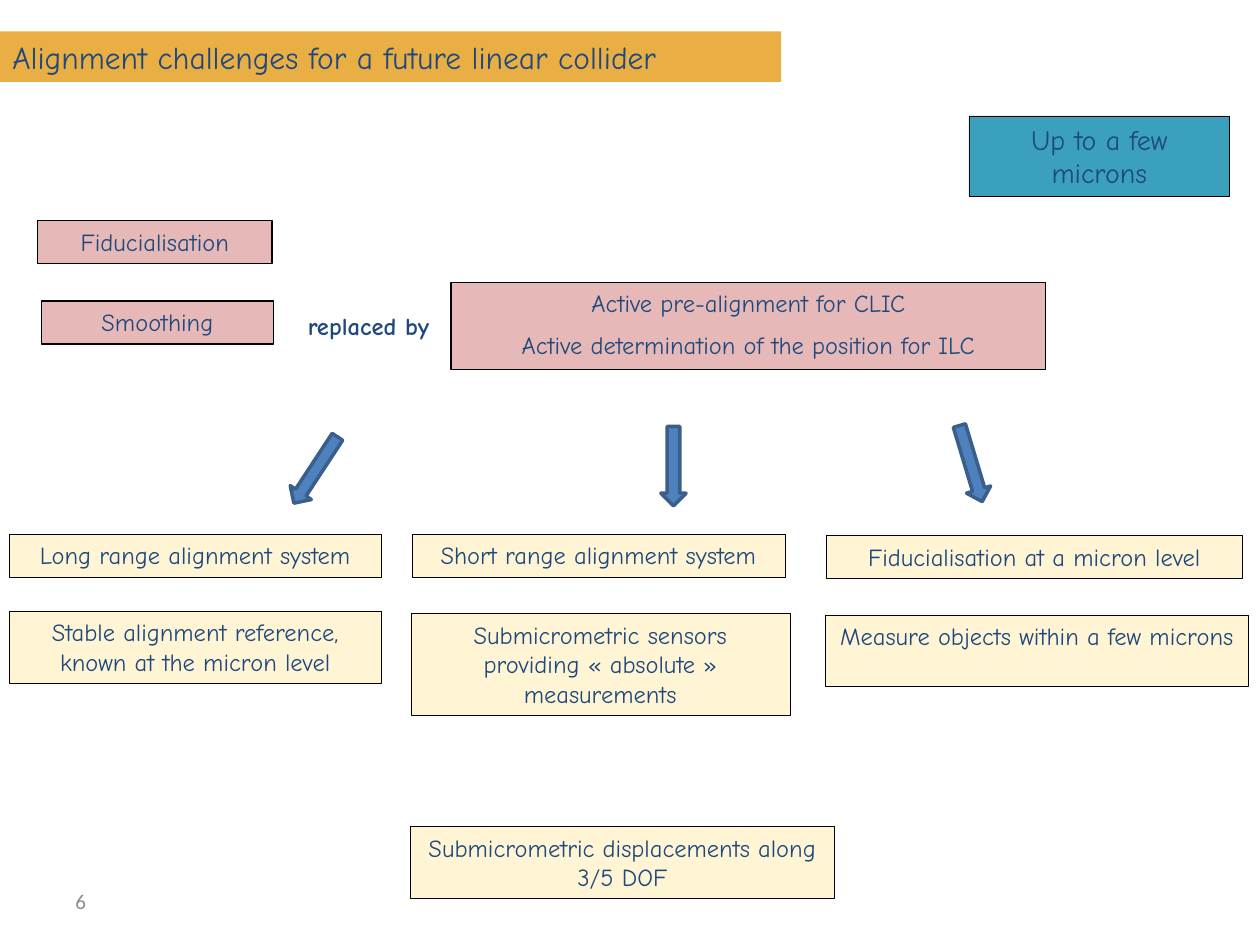
from pptx import Presentation
from pptx.dml.color import RGBColor
from pptx.enum.shapes import MSO_SHAPE
from pptx.enum.text import MSO_ANCHOR, PP_ALIGN
from pptx.util import Inches, Pt

RECT, ARROW = MSO_SHAPE.RECTANGLE, MSO_SHAPE.RIGHT_ARROW
LEFT, CENTER = PP_ALIGN.LEFT, PP_ALIGN.CENTER
TOP, MIDDLE = MSO_ANCHOR.TOP, MSO_ANCHOR.MIDDLE


class Theme:
    font, plain = "Comic Neue", "Calibri"
    navy, gray, black = "1F497D", "8C8C8C", "000000"
    gold, pink, cream, teal = "EAAF44", "E6B9B8", "FFF5D5", "3BA0BB"
    blue, edge = "4F81BD", "3A5F8C"
    title, lead, body, small = 18, 16, 14, 12
    thin, mid, thick = 0.25, 0.75, 2


deck = Presentation()
deck.slide_width, deck.slide_height = Inches(10), Inches(7.5)
slide = deck.slides.add_slide(deck.slide_layouts[6])


def add_form(kind, area, fill, line=None, width=Theme.thin):
    form = slide.shapes.add_shape(kind, *map(Inches, area))
    form.shadow.inherit = False
    form.fill.solid()
    form.fill.fore_color.rgb = RGBColor.from_string(fill)
    if line:
        form.line.color.rgb = RGBColor.from_string(line)
        form.line.width = Pt(width)
    else:
        form.line.fill.background()
    return form


def add_text(text, area, form=None, size=Theme.body, color=Theme.navy,
             font=Theme.font, bold=False, align=CENTER, anchor=TOP):
    """Write text into form, or into a new text box; each line is a paragraph."""
    form = form or slide.shapes.add_textbox(*map(Inches, area))
    frame = form.text_frame
    frame.word_wrap = True
    frame.vertical_anchor = anchor
    frame.text = text
    for index, para in enumerate(frame.paragraphs):
        para.alignment = align
        para.space_before = Pt(size / 2 if index else 0)
        para.font.name, para.font.size, para.font.bold = font, Pt(size), bold
        para.font.color.rgb = RGBColor.from_string(color)


# Title and target
area = (0, 0.25, 6.2, 0.4)
add_text("Alignment challenges for a future linear collider", area,
         form=add_form(RECT, area, Theme.gold), size=Theme.title, align=LEFT)
area = (7.69, 0.92, 2.07, 0.64)
add_text("Up to a few microns", area,
         form=add_form(RECT, area, Theme.teal, Theme.black), size=Theme.lead)

# Present steps and what takes their place
steps = [
    ("Fiducialisation", (0.3, 1.75, 1.86, 0.34)),
    ("Smoothing", (0.33, 2.39, 1.84, 0.34)),
    ("Active pre-alignment for CLIC\n"
     "Active determination of the position for ILC", (3.58, 2.24, 4.72, 0.69)),
]
for text, area in steps:
    form = add_form(RECT, area, Theme.pink, Theme.black, Theme.mid)
    add_text(text, area, form=form)
add_text("replaced by", (1.85, 2.42, 2.15, 0.34), bold=True)

# Arrows to the three topics
for left, top, turn in [(2.19, 3.63, 123.3), (5.03, 3.6, 90), (7.39, 3.58, 73.3)]:
    arrow = add_form(ARROW, (left, top, 0.63, 0.2), Theme.blue, Theme.edge, Theme.thick)
    arrow.rotation = turn

# Topics with their needs
needs = [
    ("Long range alignment system", (0.07, 4.24, 2.96, 0.34)),
    ("Short range alignment system", (3.27, 4.24, 2.96, 0.34)),
    ("Fiducialisation at a micron level", (6.56, 4.25, 3.3, 0.34)),
    ("Stable alignment reference, known at the micron level", (0.07, 4.85, 2.96, 0.57)),
    ("Submicrometric sensors providing « absolute » measurements",
     (3.26, 4.87, 3.01, 0.81)),
    ("Measure objects within a few microns", (6.55, 4.88, 3.36, 0.57)),
    ("Submicrometric displacements along 3/5 DOF", (3.26, 6.56, 3.36, 0.57)),
]
for text, area in needs:
    add_text(text, area, form=add_form(RECT, area, Theme.cream, Theme.black))

# Page number
add_text("6", (0.5, 6.95, 2.33, 0.4), size=Theme.small, color=Theme.gray,
         font=Theme.plain, align=LEFT, anchor=MIDDLE)

deck.save("out.pptx")
